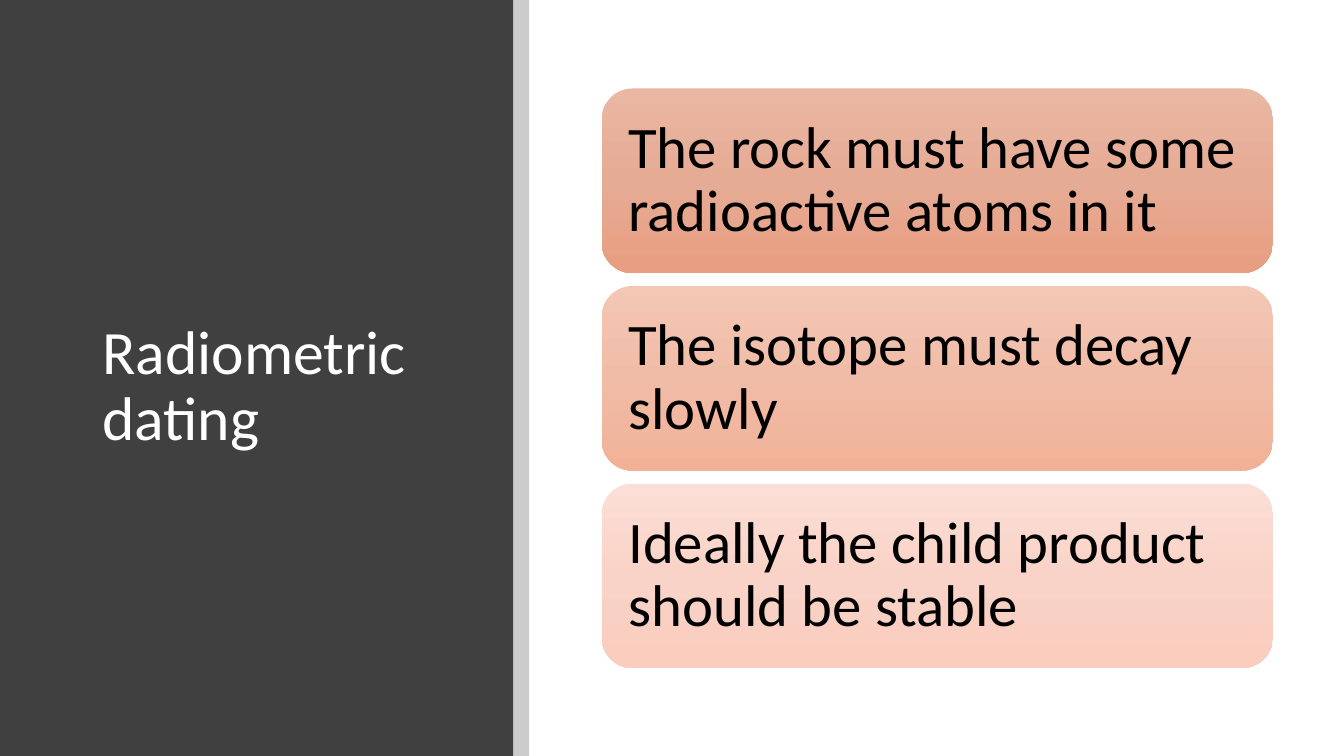
from copy import deepcopy

from lxml.etree import SubElement
from pptx import Presentation
from pptx.dml.color import RGBColor
from pptx.enum.shapes import MSO_SHAPE
from pptx.enum.text import MSO_ANCHOR, PP_ALIGN
from pptx.oxml.ns import qn
from pptx.util import Pt

WHITE = RGBColor(0xFF, 0xFF, 0xFF)
BLACK = RGBColor(0x00, 0x00, 0x00)
CHARCOAL = RGBColor(0x40, 0x40, 0x40)

CONDITIONS = [
    ("The rock must have some radioactive atoms in it",
     (RGBColor(0xEA, 0xB7, 0xA3), RGBColor(0xE6, 0xAB, 0x95), RGBColor(0xE7, 0x9E, 0x81))),
    ("The isotope must decay slowly",
     (RGBColor(0xF4, 0xC7, 0xB5), RGBColor(0xF0, 0xBC, 0xA7), RGBColor(0xF2, 0xB1, 0x97))),
    ("Ideally the child product should be stable",
     (RGBColor(0xFB, 0xDF, 0xD6), RGBColor(0xF9, 0xD3, 0xC7), RGBColor(0xFA, 0xCD, 0xBE))),
]

SLIDE_W, SLIDE_H = 960, 540
PANEL_W, STRIP_W = 366.5, 11.5
CARD_LEFT, CARD_TOP, CARD_W, CARD_H = 429.8, 63.2, 479.5, 131.8
CARD_PITCH = 141.1
CARD_INSET = 12.6


def add_shape(slide, kind, left, top, width, height):
    sp = slide.shapes.add_shape(kind, Pt(left), Pt(top), Pt(width), Pt(height))
    sp.shadow.inherit = False
    sp.line.fill.background()
    return sp


def add_band(slide, left, width, color, opacity=100):
    """Add a full-height rectangle; opacity is in percent."""
    sp = add_shape(slide, MSO_SHAPE.RECTANGLE, left, 0, width, SLIDE_H)
    sp.fill.solid()
    sp.fill.fore_color.rgb = color
    if opacity < 100:
        clr = sp.fill._xPr.find(f".//{qn('a:srgbClr')}")
        SubElement(clr, qn("a:alpha"), val=str(opacity * 1000))


def fill_gradient(sp, colors):
    """Fill from top to bottom with three evenly spaced colours."""
    sp.fill.gradient()
    sp.fill.gradient_angle = 270
    stop_list = sp.fill._xPr.find(f".//{qn('a:gsLst')}")
    stop_list.append(deepcopy(stop_list[0]))
    for i, (stop, color) in enumerate(zip(sp.fill.gradient_stops, colors)):
        stop.position = i / 2
        stop.color.rgb = color


def set_text(sp, text, size, color):
    tf = sp.text_frame
    tf.word_wrap = True
    tf.vertical_anchor = MSO_ANCHOR.MIDDLE
    p = tf.paragraphs[0]
    p.alignment = PP_ALIGN.LEFT
    p.line_spacing = 0.9
    r = p.add_run()
    r.text = text
    for name, value in {"name": "Calibri", "size": Pt(size)}.items():
        setattr(r.font, name, value)
    r.font.color.rgb = color


def add_title(slide, text):
    sp = slide.shapes.add_textbox(Pt(66), Pt(64), Pt(263), Pt(425.5))
    set_text(sp, text, 44, WHITE)


def add_card(slide, top, text, colors):
    sp = add_shape(slide, MSO_SHAPE.ROUNDED_RECTANGLE, CARD_LEFT, top, CARD_W, CARD_H)
    fill_gradient(sp, colors)
    set_text(sp, text, 42, BLACK)
    for side in ("left", "top", "right", "bottom"):
        setattr(sp.text_frame, f"margin_{side}", Pt(CARD_INSET))


def main():
    prs = Presentation()
    prs.slide_width, prs.slide_height = Pt(SLIDE_W), Pt(SLIDE_H)
    s = prs.slides.add_slide(prs.slide_layouts[6])
    add_band(s, 0, PANEL_W, CHARCOAL)
    add_band(s, PANEL_W, STRIP_W, BLACK, opacity=20)
    add_title(s, "Radiometric dating")
    for i, (text, colors) in enumerate(CONDITIONS):
        add_card(s, CARD_TOP + i * CARD_PITCH, text, colors)
    prs.save("out.pptx")


if __name__ == "__main__":
    main()
